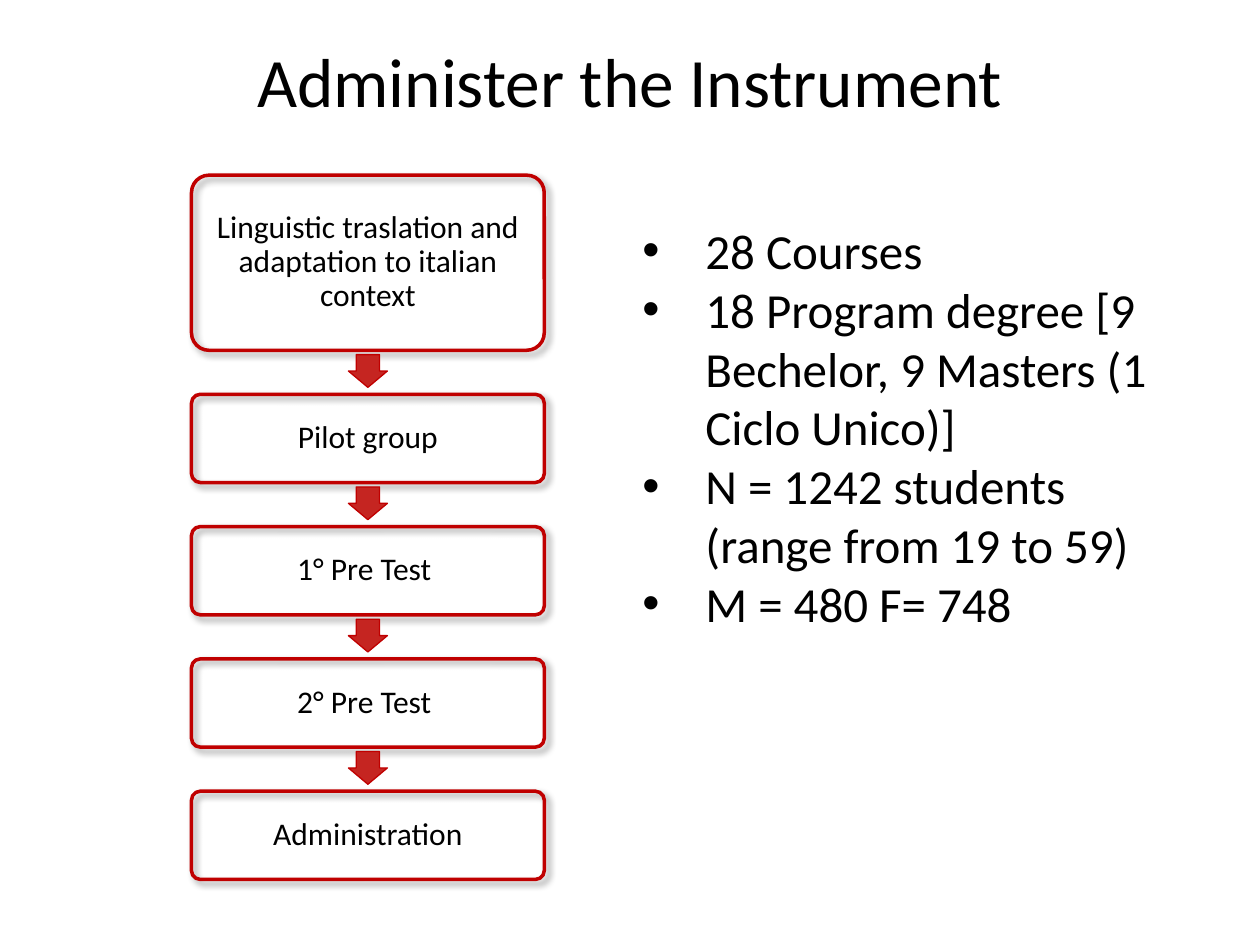
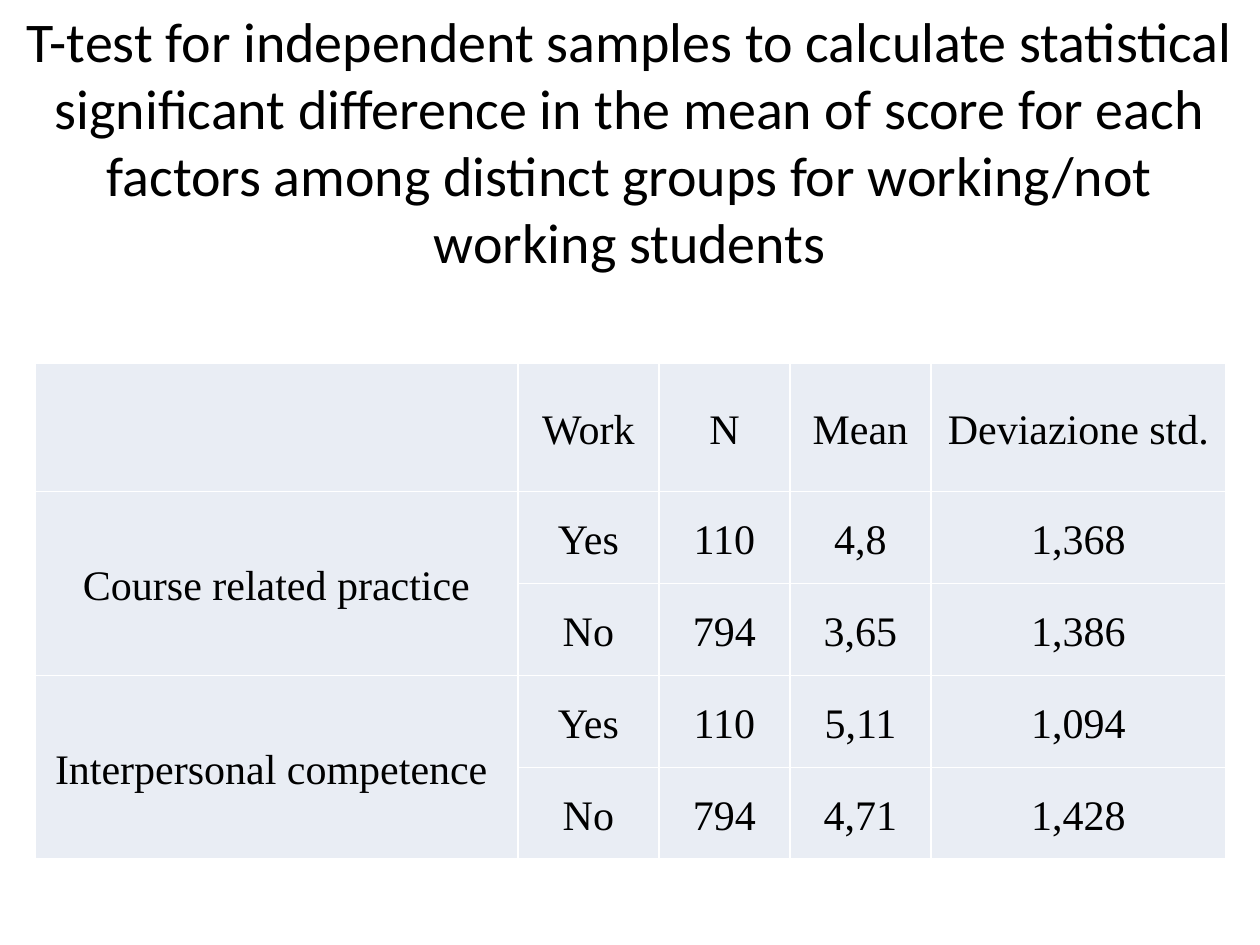
from dataclasses import dataclass

from lxml.etree import SubElement
from pptx import Presentation
from pptx.dml.color import RGBColor
from pptx.enum.shapes import MSO_SHAPE
from pptx.enum.text import MSO_ANCHOR, PP_ALIGN
from pptx.oxml.ns import qn
from pptx.util import Inches, Pt


@dataclass(frozen=True)
class Theme:
    text: str = "000000"
    outline: str = "C00000"
    arrow: str = "C52521"
    cell: str = "E9EDF4"
    cell_border: str = "FFFFFF"
    font: str = "Calibri"
    table_font: str = "Times New Roman"
    title_size: float = 39.6
    heading_size: float = 32
    bullet_size: float = 28
    table_size: float = 24
    step_size: float = 18


@dataclass(frozen=True)
class Box:
    left: float
    top: float
    width: float
    height: float

    def emu(self) -> tuple:
        return tuple(Inches(n) for n in (self.left, self.top, self.width, self.height))

    def inset(self, margin: float) -> "Box":
        return Box(self.left + margin, self.top + margin,
                   self.width - 2 * margin, self.height - 2 * margin)


@dataclass(frozen=True)
class Step:
    label: str
    height: float = 0.7


THEME = Theme()

# Flow chart of the administration
STEPS = [
    Step("Linguistic traslation and adaptation to italian context", 1.39),
    Step("Pilot group"),
    Step("1° Pre Test "),
    Step("2° Pre Test "),
    Step("Administration"),
]
FLOW_LEFT, FLOW_TOP, FLOW_WIDTH, STEP_GAP = 1.52, 1.39, 2.8, 0.35
ARROW_WIDTH, ARROW_HEIGHT = 0.31, 0.26

SAMPLE = [
    "28 Courses",
    "18 Program degree [9 Bechelor, 9 Masters (1 Ciclo Unico)]",
    "N = 1242 students (range from 19 to 59)",
    "M = 480 F= 748",
]

# T-test results; None continues the cell above
RESULTS = [
    ["", "Work", "N", "Mean", "Deviazione std."],
    ["Course related practice", "Yes", "110", "4,8", "1,368"],
    [None, "No", "794", "3,65", "1,386"],
    ["Interpersonal competence ", "Yes", "110", "5,11", "1,094"],
    [None, "No", "794", "4,71", "1,428"],
]
COLUMN_WIDTHS = [3.83, 1.12, 1.04, 1.12, 2.34]
ROW_HEIGHTS = [1.02] + [0.73] * 4


def rgb(color: str) -> RGBColor:
    return RGBColor.from_string(color)


def write(frame, *lines: str, size: float, font: str = THEME.font,
          align=PP_ALIGN.CENTER, spacing: float = 1.0, bullet: str = "") -> None:
    """Fill a text frame with one formatted paragraph for each line."""
    for index, line in enumerate(lines):
        paragraph = frame.add_paragraph() if index else frame.paragraphs[0]
        paragraph.alignment = align
        paragraph.line_spacing = spacing
        run = paragraph.add_run()
        run.text = line
        run.font.size = Pt(size)
        run.font.name = font
        run.font.color.rgb = rgb(THEME.text)
        if bullet:
            properties = paragraph._p.get_or_add_pPr()
            properties.set("marL", str(Inches(0.5)))
            properties.set("indent", str(-Inches(0.5)))
            SubElement(properties, qn("a:buFont"), typeface="Arial")
            SubElement(properties, qn("a:buChar"), char=bullet)


def add_text(slide, box: Box, *lines: str, anchor=MSO_ANCHOR.TOP,
             margins: tuple = (0.1, 0.05), **style) -> None:
    frame = slide.shapes.add_textbox(*box.emu()).text_frame
    frame.word_wrap = True
    frame.vertical_anchor = anchor
    frame.margin_left = frame.margin_right = Inches(margins[0])
    frame.margin_top = frame.margin_bottom = Inches(margins[1])
    write(frame, *lines, **style)


def cast_shadow(shape) -> None:
    shape.shadow.inherit = False
    effects = shape._element.spPr.find(qn("a:effectLst"))
    shadow = SubElement(effects, qn("a:outerShdw"), blurRad=str(Pt(4)),
                        dist=str(Pt(3)), dir=str(45 * 60000), rotWithShape="0")
    color = SubElement(shadow, qn("a:srgbClr"), val=THEME.text)
    SubElement(color, qn("a:alpha"), val="40000")


def add_step(slide, box: Box, label: str) -> None:
    frame = slide.shapes.add_shape(MSO_SHAPE.ROUNDED_RECTANGLE, *box.emu())
    frame.adjustments[0] = 0.1
    frame.fill.background()
    frame.line.color.rgb = rgb(THEME.outline)
    frame.line.width = Pt(2)
    cast_shadow(frame)
    add_text(slide, box.inset(0.02), label, anchor=MSO_ANCHOR.MIDDLE,
             margins=(0.07, 0.07), size=THEME.step_size, spacing=0.9)


def add_step_arrow(slide, gap_top: float) -> None:
    box = Box(FLOW_LEFT + (FLOW_WIDTH - ARROW_WIDTH) / 2,
              gap_top + (STEP_GAP - ARROW_HEIGHT) / 2 - 0.01,
              ARROW_WIDTH, ARROW_HEIGHT)
    arrow = slide.shapes.add_shape(MSO_SHAPE.DOWN_ARROW, *box.emu())
    arrow.adjustments[0] = 0.6
    arrow.adjustments[1] = 0.5
    arrow.shadow.inherit = False
    arrow.fill.solid()
    arrow.fill.fore_color.rgb = rgb(THEME.arrow)
    arrow.line.color.rgb = rgb(THEME.outline)
    arrow.line.width = Pt(0.75)


def format_cell(cell) -> None:
    properties = cell._tc.get_or_add_tcPr()
    for side in ("lnL", "lnR", "lnT", "lnB"):
        border = SubElement(properties, qn(f"a:{side}"), w=str(Pt(1)))
        fill = SubElement(border, qn("a:solidFill"))
        SubElement(fill, qn("a:srgbClr"), val=THEME.cell_border)
    cell.fill.solid()
    cell.fill.fore_color.rgb = rgb(THEME.cell)
    cell.vertical_anchor = MSO_ANCHOR.MIDDLE
    cell.margin_left = cell.margin_right = Inches(0.07)
    cell.margin_top = cell.margin_bottom = 0


def add_results_table(slide, left: float, top: float) -> None:
    box = Box(left, top, sum(COLUMN_WIDTHS), sum(ROW_HEIGHTS))
    table = slide.shapes.add_table(len(ROW_HEIGHTS), len(COLUMN_WIDTHS), *box.emu()).table
    table.first_row = table.horz_banding = False
    for column, width in zip(table.columns, COLUMN_WIDTHS):
        column.width = Inches(width)
    for row, height in zip(table.rows, ROW_HEIGHTS):
        row.height = Inches(height)
    for row_index, values in enumerate(RESULTS):
        for column_index, value in enumerate(values):
            cell = table.cell(row_index, column_index)
            format_cell(cell)
            if value:
                write(cell.text_frame, value, size=THEME.table_size,
                      font=THEME.table_font, spacing=1.15)
            elif value is None:
                table.cell(row_index - 1, column_index).merge(cell)


def build_instrument_slide(slide) -> None:
    add_text(slide, Box(0.5, 0.3, 9, 1.25), "Administer the Instrument",
             margins=(0.1, 0), size=THEME.title_size)
    top = FLOW_TOP
    for index, step in enumerate(STEPS):
        if index:
            add_step_arrow(slide, top - STEP_GAP)
        add_step(slide, Box(FLOW_LEFT, top, FLOW_WIDTH, step.height), step.label)
        top += step.height + STEP_GAP
    add_text(slide, Box(5, 1.7, 4.25, 3.7), *SAMPLE, size=THEME.bullet_size,
             align=PP_ALIGN.LEFT, bullet="•")


def build_results_slide(slide) -> None:
    add_text(slide, Box(0, 0, 10, 2.96),
             "T-test for independent samples to calculate statistical significant "
             "difference in the mean of score for each factors among distinct groups "
             "for working/not working students", size=THEME.heading_size)
    add_results_table(slide, 0.28, 2.88)


def main() -> None:
    deck = Presentation()
    deck.slide_width, deck.slide_height = Inches(10), Inches(7.5)
    blank = deck.slide_layouts[6]
    for build in (build_instrument_slide, build_results_slide):
        build(deck.slides.add_slide(blank))
    deck.save("out.pptx")


if __name__ == "__main__":
    main()
